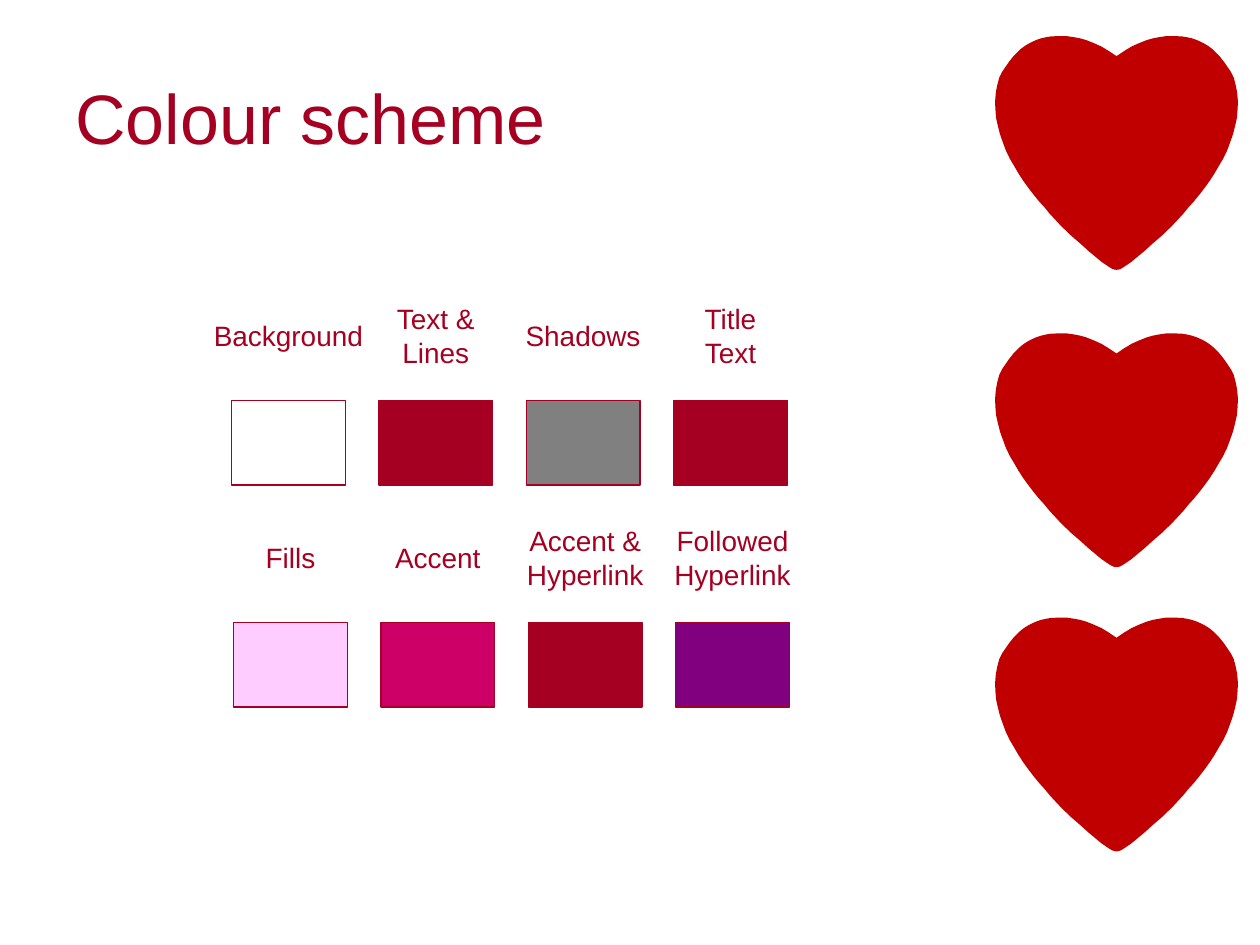
from dataclasses import dataclass

from pptx import Presentation
from pptx import util as u
from pptx.dml.color import RGBColor
from pptx.enum import shapes, text

Pt = u.Pt


@dataclass(frozen=True)
class Theme:
    font: str = "Arial"
    ink: str = "A50021"
    heart: str = "C00000"
    title: float = 40
    label: float = 16
    line: float = 0.75


# Right half of the heart, from notch to tip: points from its axis and top
HALF = [
    (0, 11.5), (4.3, 8.6), (8.6, 6), (13, 4), (17.3, 2.3), (20.9, 1.3),
    (24.5, 0.6), (28, 0.1), (33, 0), (37.4, 0.2), (40.3, 0.7), (43, 1.3),
    (45.7, 2.2), (48.2, 3.3), (50.5, 4.5), (52.6, 5.8), (54.6, 7.3),
    (56.2, 8.8), (59, 11.7), (61.4, 14.7), (63.4, 17.6), (65.5, 20.7),
    (67, 23.8), (68.1, 28), (68.9, 32), (69.4, 37.6), (69.2, 42),
    (68.8, 46.8), (67.8, 51.3), (66.6, 56), (65, 60.6), (63.2, 65.4),
    (61, 70), (58.5, 74.2), (56, 78.5), (53.3, 82.7), (50.4, 86.7),
    (47.4, 90.6), (44.3, 94.4), (41, 98), (38.2, 101.5), (31.7, 108.5),
    (26, 114), (20.2, 119), (15.8, 123), (12.2, 126), (8.6, 129),
    (6.4, 130.5), (4.3, 131.9), (2.9, 132.8), (1.5, 133.4), (0, 133.6),
]
AXIS = 638
TOPS = (20.6, 190.5, 352.9)

PITCH, WIDE, HIGH = 84.2, 65, 48.2
RISE = 37  # from a swatch's top up to the middle of its label
# Left and top of each row, then label, label width and fill of each swatch
ROWS = [
    (132.3, 229, [
        ("Background", 100.5, "FFFFFF"),
        ("Text &\nLines", 61, "A50021"),
        ("Shadows", 81, "808080"),
        ("Title\vText", 46, "A50021"),
    ]),
    (133.5, 355.8, [
        ("Fills", 43.5, "FFCCFF"),
        ("Accent", 64, "CC0066"),
        ("Accent &\nHyperlink", 82, "A50021"),
        ("Followed\nHyperlink", 82, "800080"),
    ]),
]


class Deck:
    def __init__(self, theme):
        self.theme = theme
        self.prs = Presentation()
        self.prs.slide_width, self.prs.slide_height = Pt(720), Pt(540)
        self.slide = self.prs.slides.add_slide(self.prs.slide_layouts[6])

    def paint(self, shape, fill, line=None):
        shape.shadow.inherit = False
        shape.fill.solid()
        shape.fill.fore_color.rgb = RGBColor.from_string(fill)
        if line:
            shape.line.color.rgb = RGBColor.from_string(line)
            shape.line.width = Pt(self.theme.line)
        else:
            shape.line.fill.background()

    def heart(self, axis, top):
        left = [(-x, y) for x, y in reversed(HALF[1:-1])]
        dots = [(Pt(axis + x), Pt(top + y)) for x, y in HALF + left]
        form = self.slide.shapes.build_freeform(*dots[0])
        form.add_line_segments(dots[1:], close=True)
        self.paint(form.convert_to_shape(), self.theme.heart)

    def swatch(self, left, top, fill):
        box = self.slide.shapes.add_shape(
            shapes.MSO_SHAPE.RECTANGLE, Pt(left), Pt(top), Pt(WIDE), Pt(HIGH))
        self.paint(box, fill, self.theme.ink)

    def words(self, copy, left, top, wide, high, size, align, **frame):
        box = self.slide.shapes.add_textbox(
            Pt(left), Pt(top), Pt(wide), Pt(high))
        body = box.text_frame
        body.text = copy
        for key, value in frame.items():
            setattr(body, key, value)
        look = {"name": self.theme.font, "size": Pt(size)}
        for para in body.paragraphs:
            para.alignment = align
            for run in para.runs:
                for key, value in look.items():
                    setattr(run.font, key, value)
                run.font.color.rgb = RGBColor.from_string(self.theme.ink)

    def title(self, copy):
        self.words(copy, 36, 21.6, 520, 90, self.theme.title,
                   text.PP_ALIGN.LEFT, word_wrap=True,
                   vertical_anchor=text.MSO_ANCHOR.MIDDLE)

    def label(self, copy, mid, level, wide):
        """Centre a label on the point (mid, level)."""
        high = 26.6 if len(copy.splitlines()) == 1 else 46
        self.words(copy, mid - wide / 2, level - high / 2, wide, high,
                   self.theme.label, text.PP_ALIGN.CENTER, word_wrap=False,
                   auto_size=text.MSO_AUTO_SIZE.SHAPE_TO_FIT_TEXT)


def main():
    deck = Deck(Theme())
    for top in TOPS:
        deck.heart(AXIS, top)
    deck.title("Colour scheme")
    for start, top, items in ROWS:
        for col, (copy, wide, fill) in enumerate(items):
            left = start + col * PITCH
            deck.swatch(left, top, fill)
            deck.label(copy, left + WIDE / 2, top - RISE, wide)
    deck.prs.save("out.pptx")


if __name__ == "__main__":
    main()
